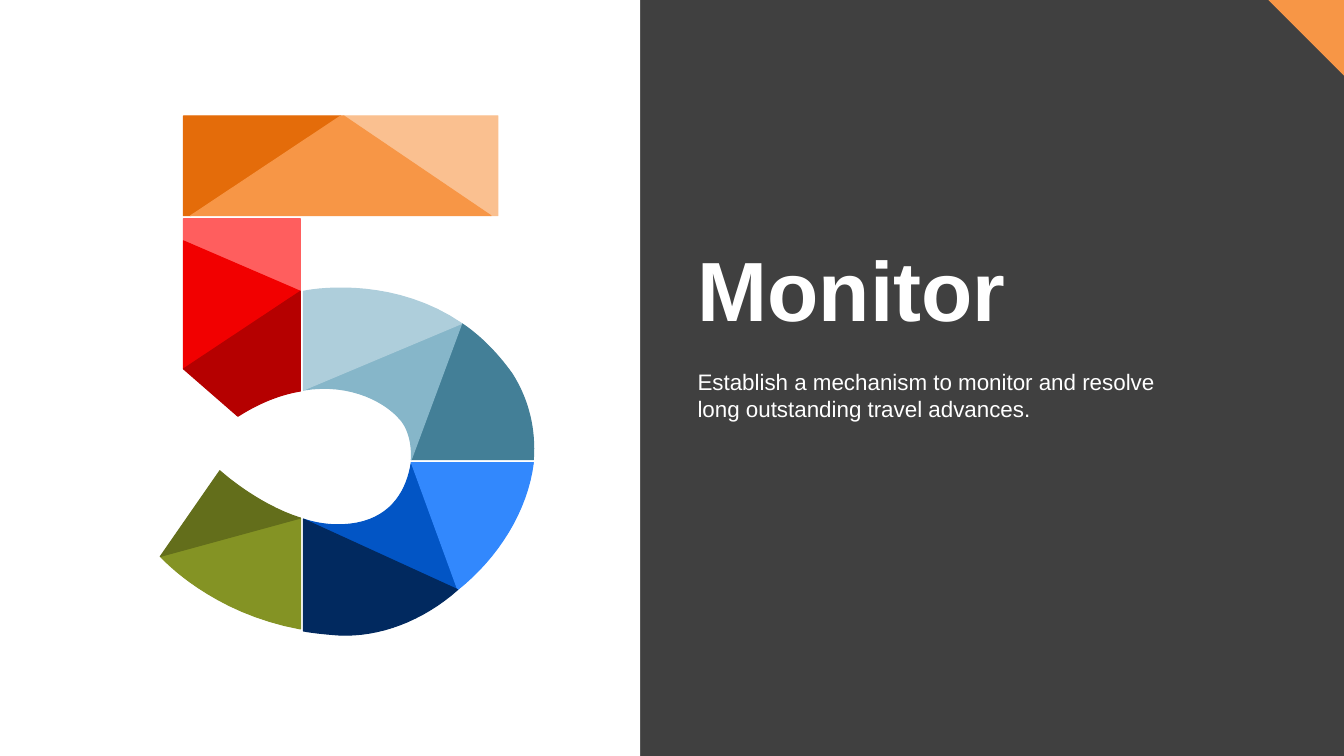
"""Build the section slide "Monitor" with a faceted figure five."""
from pptx import Presentation
from pptx import util as u
from pptx.dml.color import RGBColor
from pptx.enum import shapes, text

PX = 9144
PAGE_WIDTH, PAGE_HEIGHT = 1333, 750
PANEL_WIDTH = 635
CORNER_SIZE = 75
TEXT_LEFT = 682
ARC_STEPS = 16

WHITE, CHARCOAL, ORANGE = "FFFFFF", "404040", "F79646"

GAP = 3
LEFT, BAR_RIGHT = 182, 494
BAR_TOP, BAR_BOTTOM = 115, 214
BAR_MIDDLE = (LEFT + BAR_RIGHT) // 2
BAR_INSET = 7
STEM_TOP = BAR_BOTTOM + GAP
STEM_RIGHT = 298
BOWL_LEFT = STEM_RIGHT + GAP
BOWL_INNER, BOWL_OUTER = 408, 529
UPPER_END = 456
LOWER_START = UPPER_END + GAP

CORNERS = {
    "bar top left": (LEFT, BAR_TOP),
    "bar top right": (BAR_RIGHT, BAR_TOP),
    "bar bottom left": (LEFT, BAR_BOTTOM),
    "bar bottom right": (BAR_RIGHT, BAR_BOTTOM),
    "bar peak left": (BAR_MIDDLE, BAR_TOP),
    "bar peak right": (BAR_MIDDLE + GAP, BAR_TOP),
    "bar foot left": (LEFT + BAR_INSET, BAR_BOTTOM),
    "bar foot right": (BAR_RIGHT - BAR_INSET, BAR_BOTTOM),
    "stem top left": (LEFT, STEM_TOP),
    "stem top right": (STEM_RIGHT, STEM_TOP),
    "stem upper fold": (LEFT, 239),
    "stem lower fold": (LEFT, 366),
    "stem hinge": (STEM_RIGHT, 289),
    "stem foot": (STEM_RIGHT, 388),
    "stem tip": (236, 413),
    "crest top": (BOWL_LEFT, 289),
    "crest foot": (BOWL_LEFT, 387),
    "shoulder": (458, 321),
    "upper bulge": (508, 371),
    "upper bend": (396, 415),
    "upper inner": (BOWL_INNER, UPPER_END),
    "upper outer": (BOWL_OUTER, UPPER_END),
    "lower inner": (BOWL_INNER, LOWER_START),
    "lower outer": (BOWL_OUTER, LOWER_START),
    "lower bend": (354, 519),
    "hip": (454, 585),
    "belly": (336, 630),
    "base top": (BOWL_LEFT, 515),
    "base bottom": (BOWL_LEFT, 626),
    "tail top": (STEM_RIGHT, 514),
    "tail bottom": (STEM_RIGHT, 624),
    "tail end": (218, 467),
    "tail tip": (159, 552),
}

ARC_HANDLES = {
    ("stem tip", "stem foot"): ((258, 399), (279, 391)),
    ("shoulder", "crest top"): ((394, 277), (320, 285)),
    ("crest foot", "upper bend"): ((350, 379), (384, 401)),
    ("upper bend", "upper inner"): ((404, 423), (409, 438)),
    ("upper outer", "upper bulge"): ((531, 427), (525, 398)),
    ("upper bulge", "shoulder"): ((493, 350), (476, 333)),
    ("lower inner", "lower bend"): ((404, 485), (390, 512)),
    ("lower bend", "base top"): ((337, 522), (319, 521)),
    ("hip", "lower outer"): ((494, 553), (523, 507)),
    ("base bottom", "belly"): ((312, 628), (323, 629)),
    ("belly", "hip"): ((376, 632), (419, 616)),
    ("tail top", "tail end"): ((254, 500), (218, 467)),
    ("tail tip", "tail bottom"): ((162, 555), (210, 608)),
}

FIGURE_PARTS = {
    "bar": {
        "E46C0A": ["bar top left", "bar bottom left", "bar foot left", "bar peak left"],
        "FAC090": ["bar top right", "bar bottom right", "bar foot right", "bar peak right"],
        ORANGE: ["bar peak left", "bar foot left", "bar foot right", "bar peak right"],
    },
    "stem": {
        "FF5E5E": ["stem top left", "stem upper fold", "stem hinge", "stem top right"],
        "F20000": ["stem upper fold", "stem lower fold", "stem hinge"],
        "B50000": ["stem lower fold", "stem tip", "stem foot", "stem hinge"],
    },
    "tail": {
        "849324": ["tail tip", "tail bottom", "tail top"],
        "636E1B": ["tail top", "tail end", "tail tip"],
    },
    "upper bowl": {
        "437F97": ["upper inner", "upper outer", "upper bulge", "shoulder"],
        "86B6C9": ["crest foot", "upper bend", "upper inner", "shoulder"],
        "AECEDB": ["shoulder", "crest top", "crest foot"],
    },
    "lower bowl": {
        "0255C5": ["lower inner", "lower bend", "base top", "hip"],
        "3288FD": ["hip", "lower outer", "lower inner"],
        "01295F": ["base top", "base bottom", "belly", "hip"],
    },
}

TEXTS = [
    ("Establish a mechanism to monitor and resolve long outstanding travel advances.",
     (TEXT_LEFT, 360, 480, 64),
     {"auto_size": text.MSO_AUTO_SIZE.SHAPE_TO_FIT_TEXT},
     {},
     {"size": u.Pt(16)}),
    ("Monitor",
     (TEXT_LEFT, 122, 583, 218),
     {"vertical_anchor": text.MSO_ANCHOR.BOTTOM},
     {"line_spacing": 0.8},
     {"size": u.Pt(60), "bold": True}),
]


def paint(fill, color):
    """Give a fill one solid colour."""
    fill.solid()
    fill.fore_color.rgb = RGBColor.from_string(color)


def add_outline(page, color, points):
    """Draw a closed, filled polygon without a line."""
    emu_points = [(round(x * PX), round(y * PX)) for x, y in points]
    builder = page.shapes.build_freeform(*emu_points[0], scale=1.0)
    builder.add_line_segments(emu_points[1:], close=True)
    outline = builder.convert_to_shape()
    outline.shadow.inherit = False
    paint(outline.fill, color)
    outline.line.fill.background()
    return outline


deck = Presentation()
deck.slide_width, deck.slide_height = PAGE_WIDTH * PX, PAGE_HEIGHT * PX
page = deck.slides.add_slide(deck.slide_layouts[6])
paint(page.background.fill, CHARCOAL)

add_outline(page, ORANGE, [(PAGE_WIDTH - CORNER_SIZE, 0), (PAGE_WIDTH, 0),
                           (PAGE_WIDTH, CORNER_SIZE)])

panel = page.shapes.add_shape(shapes.MSO_SHAPE.RECTANGLE, 0, 0,
                              PANEL_WIDTH * PX, PAGE_HEIGHT * PX)
panel.shadow.inherit = False
paint(panel.fill, WHITE)
panel.line.fill.background()

for facets in FIGURE_PARTS.values():
    for color, names in facets.items():
        points = []
        for start, end in zip(names, names[1:] + names[:1]):
            points.append(CORNERS[start])
            if (start, end) in ARC_HANDLES:
                controls = [CORNERS[start], *ARC_HANDLES[start, end], CORNERS[end]]
                for step in range(1, ARC_STEPS):
                    t = step / ARC_STEPS
                    weights = ((1 - t) ** 3, 3 * t * (1 - t) ** 2, 3 * t ** 2 * (1 - t), t ** 3)
                    points.append([sum(w * value for w, value in zip(weights, axis))
                                   for axis in zip(*controls)])
        facet = add_outline(page, color, points)
        paint(facet.line.fill, color)
        facet.line.width = u.Pt(0.75)

for words, place, frame_format, para_format, font_format in TEXTS:
    box = page.shapes.add_textbox(*(length * PX for length in place))
    frame = box.text_frame
    para = frame.paragraphs[0]
    span = para.add_run()
    span.text = words
    paint(span.font.fill, WHITE)
    for target, values in (
        (frame, {"word_wrap": True, **frame_format}),
        (para, para_format),
        (span.font, {"name": "Arial", **font_format}),
    ):
        for name, value in values.items():
            setattr(target, name, value)

deck.save("out.pptx")
